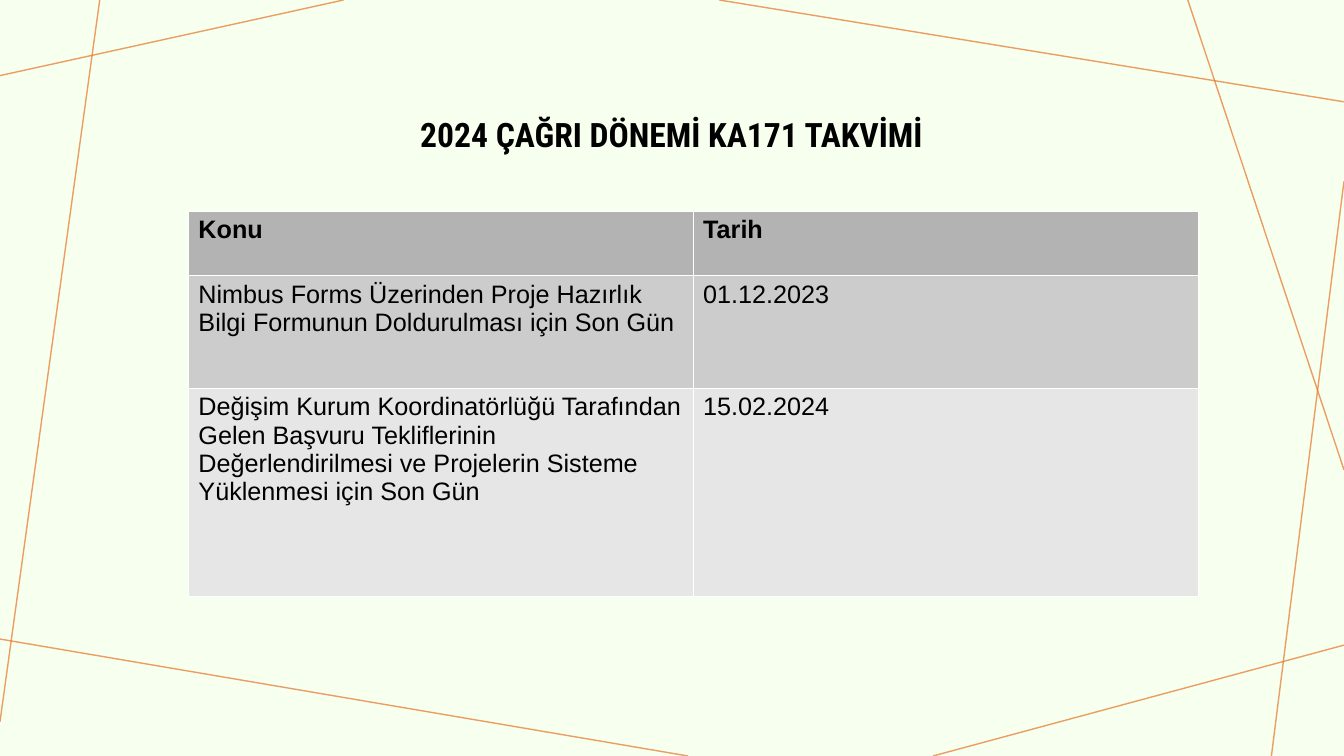
from dataclasses import dataclass

from lxml.etree import SubElement
from pptx import Presentation
from pptx.dml.color import RGBColor
from pptx.enum.shapes import MSO_CONNECTOR
from pptx.enum.text import MSO_ANCHOR, PP_ALIGN
from pptx.oxml.ns import qn
from pptx.util import Inches, Pt


@dataclass(frozen=True)
class Theme:
    background: str = "F7FFEE"
    accent: str = "E77629"
    accent_alpha: int = 70000
    text: str = "000000"
    border: str = "FFFFFF"
    row_fills: tuple = ("B3B3B3", "CCCCCC", "E6E6E6")
    title_font: str = "Roboto Condensed"
    body_font: str = "Arial"
    title_size: int = 24
    body_size: int = 18
    line_width: float = 1
    border_width: float = 0.06


THEME = Theme()
SLIDE_BOX = (0, 0, 13.34, 7.5)
TITLE_BOX = (1.25, 0.58, 10.83, 1.51)
CALENDAR_BOX = (1.87, 2.09, 10.02, 3.82)
ROW_HEIGHTS = (0.64, 1.12, 2.06)

TITLE = "2024 ÇAĞRI DÖNEMİ KA171 TAKVİMİ"
CALENDAR = [
    ("Konu", "Tarih"),
    ("Nimbus Forms Üzerinden Proje Hazırlık Bilgi Formunun "
     "Doldurulması için Son Gün", "01.12.2023"),
    ("Değişim Kurum Koordinatörlüğü Tarafından Gelen Başvuru Tekliflerinin "
     "Değerlendirilmesi ve Projelerin Sisteme Yüklenmesi için Son Gün",
     "15.02.2024"),
]
# Start and end of each decorative line, from the slide's top left corner
RAYS = [
    ((3.41, 0), (0, 0.75)),
    ((0.99, 0), (0, 7.16)),
    ((6.83, 7.5), (0, 6.34)),
    ((13.34, 6.4), (9.26, 7.5)),
    ((13.34, 1.8), (12.62, 7.5)),
    ((13.34, 4.66), (11.79, 0)),
    ((13.34, 1.01), (7.14, 0)),
]


def rgb(color):
    return RGBColor.from_string(color)


def write(frame, text, *, font=THEME.body_font, size=THEME.body_size,
          bold=False, align=PP_ALIGN.LEFT):
    frame.word_wrap = True
    paragraph = frame.paragraphs[0]
    paragraph.alignment = align
    run = paragraph.add_run()
    run.text = text
    run.font.name = font
    run.font.size = Pt(size)
    run.font.bold = bold
    run.font.color.rgb = rgb(THEME.text)


def add_rays(slide, box):
    left, top = box[:2]
    for (x1, y1), (x2, y2) in RAYS:
        ray = slide.shapes.add_connector(
            MSO_CONNECTOR.STRAIGHT, Inches(left + x1), Inches(top + y1),
            Inches(left + x2), Inches(top + y2))
        ray.line.width = Pt(THEME.line_width)
        ray.line.color.rgb = rgb(THEME.accent)
        properties = ray._element.spPr
        color = properties.find(".//" + qn("a:srgbClr"))
        SubElement(color, qn("a:alpha"), val=str(THEME.accent_alpha))
        SubElement(properties, qn("a:effectLst"))


def add_title(slide, box):
    title = slide.shapes.title
    title.left, title.top, title.width, title.height = map(Inches, box)
    frame = title.text_frame
    frame.margin_left = frame.margin_right = 0
    frame.margin_top = frame.margin_bottom = 0
    frame.vertical_anchor = MSO_ANCHOR.MIDDLE
    write(frame, TITLE, font=THEME.title_font, size=THEME.title_size,
          bold=True, align=PP_ALIGN.CENTER)


def set_borders(cell):
    properties = cell._tc.get_or_add_tcPr()
    for side in ("a:lnL", "a:lnR", "a:lnT", "a:lnB"):
        edge = SubElement(properties, qn(side), w=str(Pt(THEME.border_width)))
        fill = SubElement(edge, qn("a:solidFill"))
        SubElement(fill, qn("a:srgbClr"), val=THEME.border)


def add_calendar(slide, box):
    left, top, width, height = map(Inches, box)
    calendar = slide.shapes.add_table(
        len(CALENDAR), len(CALENDAR[0]), left, top, width, height).table
    calendar.horz_banding = False
    rows = zip(calendar.rows, ROW_HEIGHTS, THEME.row_fills, CALENDAR)
    for index, (row, row_height, fill, texts) in enumerate(rows):
        row.height = Inches(row_height)
        for cell, text in zip(row.cells, texts):
            set_borders(cell)
            cell.fill.solid()
            cell.fill.fore_color.rgb = rgb(fill)
            write(cell.text_frame, text, bold=index == 0)


def main():
    deck = Presentation()
    deck.slide_width, deck.slide_height = map(Inches, SLIDE_BOX[2:])
    slide = deck.slides.add_slide(deck.slide_layouts.get_by_name("Title Only"))
    slide.background.fill.solid()
    slide.background.fill.fore_color.rgb = rgb(THEME.background)

    add_rays(slide, SLIDE_BOX)
    add_title(slide, TITLE_BOX)
    add_calendar(slide, CALENDAR_BOX)
    deck.save("out.pptx")


if __name__ == "__main__":
    main()
